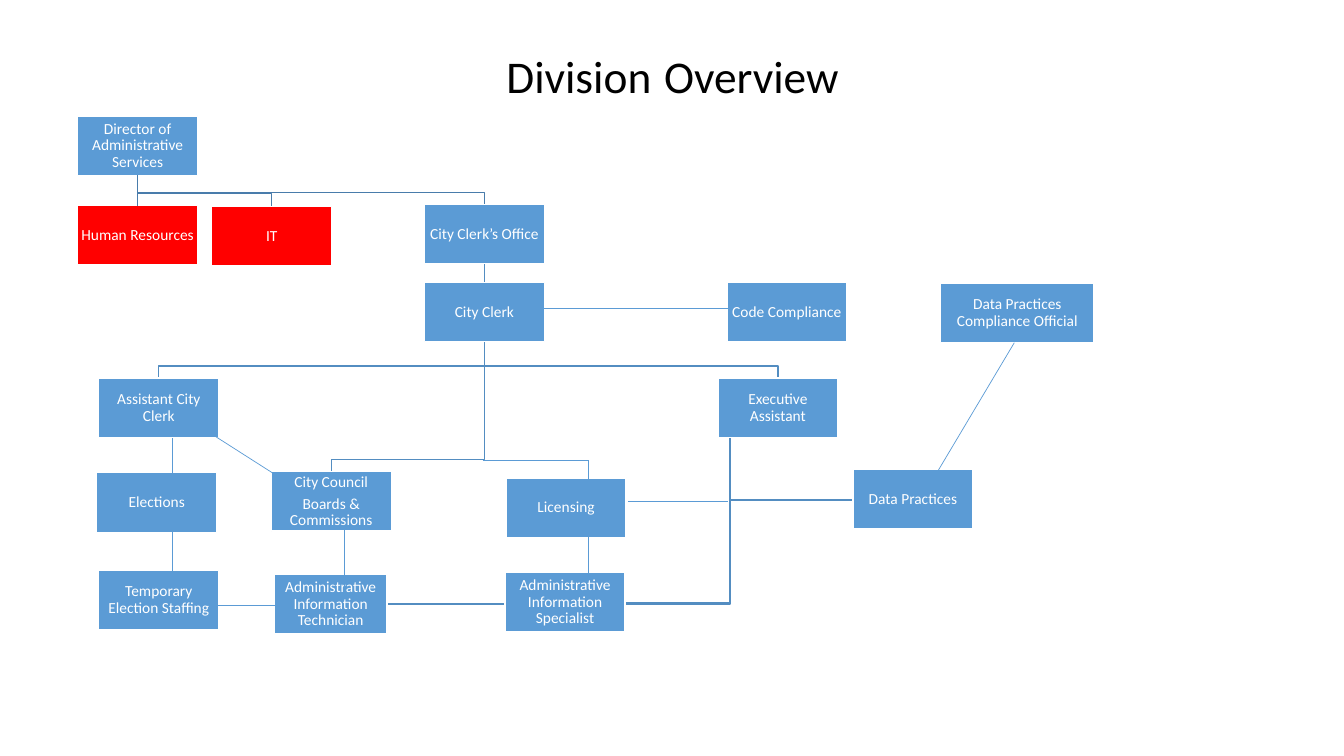
from lxml.etree import SubElement
from pptx import Presentation
from pptx.dml.color import RGBColor
from pptx.enum.shapes import MSO_CONNECTOR, MSO_SHAPE
from pptx.enum.text import MSO_ANCHOR, MSO_AUTO_SIZE, PP_ALIGN
from pptx.oxml.ns import qn
from pptx.util import Inches, Pt

CELL = Inches(0.1)  # side of one grid square; all places below count squares
BOX_WIDTH, BOX_HEIGHT = 11.9, 5.9
COLORS = {"box": "5B9BD5", "alert": "FF0000", "white": "FFFFFF", "black": "000000",
          "upper": "497CAB", "lower": "538DC1", "thin": "5B9BD5"}
FRAME = {"word_wrap": True, "auto_size": MSO_AUTO_SIZE.NONE,
         "vertical_anchor": MSO_ANCHOR.MIDDLE}
BOX_FRAME = FRAME | {f"margin_{side}": Inches(0.01)
                     for side in ("left", "top", "right", "bottom")}
PARAGRAPH = {"alignment": PP_ALIGN.CENTER, "line_spacing": 0.9}

# text: (column, row)
BOXES = {
    "Code Compliance": (72.1, 28),
    "Director of Administrative Services": (7.7, 11.5),
    "Human Resources": (7.7, 20.4),
    "IT": (21, 20.5),
    "City Clerk’s Office": (42.1, 20.3),
    "City Clerk": (42.1, 28),
    "Assistant City Clerk": (9.8, 37.5),
    "City Council\nBoards & Commissions": (26.9, 46.8),
    "Executive Assistant": (71.2, 37.5),
    "Data Practices": (84.6, 46.6),
    "Administrative Information Specialist": (50.1, 56.8),
    "Administrative Information Technician": (27.2, 57),
    "Licensing": (50.2, 47.4),
    "Elections": (9.6, 46.9),
    "Temporary Election Staffing": (9.8, 56.6),
    "Data Practices Compliance Official": (93.3, 28.1),
}
WIDTHS = {"Administrative Information Technician": 11.2,
          "Data Practices Compliance Official": 15.2}
ALERTS = {"Human Resources", "IT"}

# parent, child, row of the crossbar, colour
BRANCHES = [
    ("City Clerk", "Executive Assistant", 36.3, "lower"),
    ("City Clerk", "City Council\nBoards & Commissions", 45.6, "lower"),
    ("City Clerk", "Assistant City Clerk", 36.3, "lower"),
    ("Director of Administrative Services", "City Clerk’s Office", 19.1, "upper"),
    ("Director of Administrative Services", "IT", 19.2, "upper"),
]
STRAIGHT_DROPS = [
    ("City Clerk’s Office", "City Clerk", "lower"),
    ("Director of Administrative Services", "Human Resources", "upper"),
]
ASSISTANT_TRUNK = (72.4, 43.4)
ASSISTANT_REACHES = [(38.4, 59.9), (61.9, 59.8), (84.6, 49.6)]
THIN_LINES = [
    ((17.1, 43.5), (17.1, 47.5)), ((17.1, 51.8), (17.1, 56.6)),
    ((20.9, 43), (27, 46.9)), ((34.2, 52.6), (34.2, 58.2)),
    ((21.5, 60.1), (27.6, 60.1)), ((58.4, 45.7), (58.4, 48.4)),
    ((58.4, 52.4), (58.4, 57.2)), ((47.9, 45.7), (58.4, 45.7)),
    ((52.4, 30.6), (72.2, 30.6)), ((100.6, 34), (92.8, 47.1)),
    ((72.2, 49.7), (62.3, 49.7)),
]


def grid(*counts):
    return [round(count * CELL) for count in counts]


def color(name):
    return RGBColor.from_string(COLORS[name])


def apply(target, values):
    for name, value in values.items():
        setattr(target, name, value)


def style_line(line, color_name, width):
    line.color.rgb = color(color_name)
    line.width = Pt(width)


def style_font(font, size, color_name):
    apply(font, {"name": "Calibri", "size": Pt(size)})
    font.color.rgb = color(color_name)


def middle(name):
    return BOXES[name][0] + WIDTHS.get(name, BOX_WIDTH) / 2


def add_title(page):
    title = page.shapes.title
    apply(title, dict(zip(("left", "top", "width", "height"), grid(9.2, 4, 115, 7))))
    apply(title.text_frame, FRAME)
    para = title.text_frame.paragraphs[0]
    apply(para, PARAGRAPH)
    for text, size in (("Division", 32.4), (" ", 39.6), ("Overview", 32.4)):
        span = para.add_run()
        span.text = text
        style_font(span.font, size, "black")


def add_box(page, name):
    left, top = BOXES[name]
    place = grid(left, top, WIDTHS.get(name, BOX_WIDTH), BOX_HEIGHT)
    box = page.shapes.add_shape(MSO_SHAPE.RECTANGLE, *place)
    box.shadow.inherit = False
    box.fill.solid()
    box.fill.fore_color.rgb = color("alert" if name in ALERTS else "box")
    style_line(box.line, "white", 1)
    apply(box.text_frame, BOX_FRAME)
    box.text_frame.text = name
    for para in box.text_frame.paragraphs:
        apply(para, PARAGRAPH | {"space_after": Pt(3.85)})
        style_font(para.runs[0].font, 11, "white")
    return box


def add_bent_line(page, points, color_name):
    start, *others = [grid(*point) for point in points]
    builder = page.shapes.build_freeform(*start, scale=1.0)
    builder.add_line_segments(others, close=False)
    bend = builder.convert_to_shape()
    bend.shadow.inherit = False
    bend.fill.background()
    style_line(bend.line, color_name, 1)


def add_branch(page, parent, child, crossbar, color_name):
    start, end = middle(parent), middle(child)
    add_bent_line(page, [(start, BOXES[parent][1] + BOX_HEIGHT), (start, crossbar),
                         (end, crossbar), (end, BOXES[child][1])], color_name)


def add_line(page, start, end, color_name="thin", width=0.5):
    line = page.shapes.add_connector(MSO_CONNECTOR.STRAIGHT, *grid(*start, *end))
    style_line(line.line, color_name, width)
    SubElement(line._element.spPr, qn("a:effectLst"))
    return line


def add_straight_drop(page, boxes, parent, child, color_name):
    start = (middle(parent), BOXES[parent][1] + BOX_HEIGHT)
    line = add_line(page, start, (middle(child), BOXES[child][1]), color_name, 1)
    line.begin_connect(boxes[parent], 2)
    line.end_connect(boxes[child], 0)


def main():
    deck = Presentation()
    deck.slide_width, deck.slide_height = Inches(13.33), Inches(7.5)
    page = deck.slides.add_slide(deck.slide_layouts[5])
    add_title(page)
    column, row = ASSISTANT_TRUNK
    for reach in ASSISTANT_REACHES:
        add_bent_line(page, [(column, row), (column, reach[1]), reach], "lower")
    for branch in BRANCHES:
        add_branch(page, *branch)
    boxes = {name: add_box(page, name) for name in BOXES}
    for drop in STRAIGHT_DROPS:
        add_straight_drop(page, boxes, *drop)
    for start, end in THIN_LINES:
        add_line(page, start, end)
    deck.save("out.pptx")


if __name__ == "__main__":
    main()
